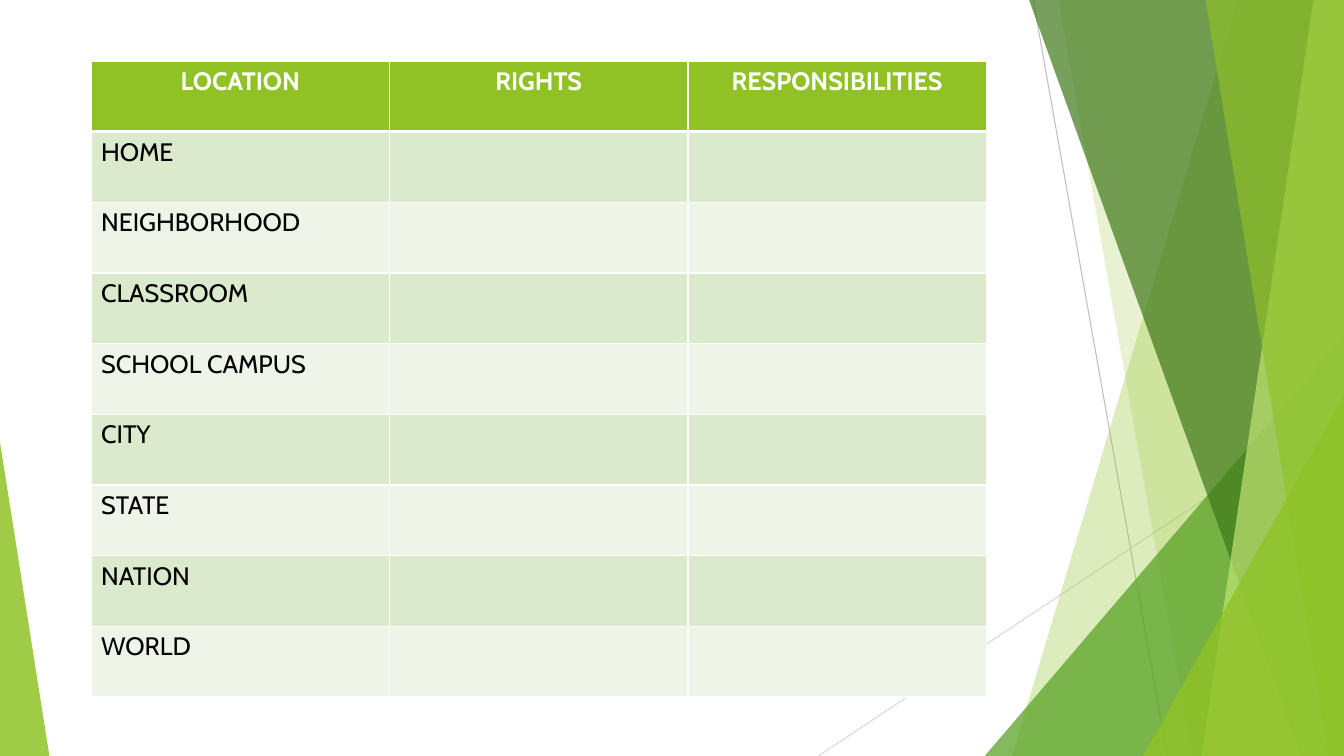
from lxml.etree import SubElement
from pptx import Presentation
from pptx.dml.color import RGBColor
from pptx.enum.shapes import MSO_CONNECTOR as Connector, MSO_SHAPE as Preset
from pptx.enum.text import PP_ALIGN as Align
from pptx.oxml.ns import qn
from pptx.util import Pt

SLIDE_WIDTH, SLIDE_HEIGHT = 960, 540
GREEN, WHITE, BLACK = "90C226", "FFFFFF", "000000"
BANDS = ("DBE9CD", "EEF4E8")
HEADINGS = ("LOCATION", "RIGHTS", "RESPONSIBILITIES")
LOCATIONS = ("HOME", "NEIGHBORHOOD", "CLASSROOM", "SCHOOL CAMPUS",
             "CITY", "STATE", "NATION", "WORLD")
THIN_LINES = (
    (158, 0, 253.8, 540, "BFBFBF"),
    (380, 290.2, 4.6, 540, "D9D9D9"),
)
FACETS = (
    ("band", 304.2, 142.9, GREEN, 30),
    ("band", 176, 271.8, GREEN, 20),
    ("triangle", 123.4, 239.8, "54A021", 72),
    ("band", 155.1, 349.5, "3F7819", 70),
    ("band", 358.2, 278.2, "C0E474", 70),
    ("band", 281.1, 369, GREEN, 65),
    ("triangle", 236.5, 283, GREEN, 80),
)


def color(value):
    return RGBColor.from_string(value)


def paint(shape, value, opacity):
    shape.shadow.inherit = False
    shape.line.fill.background()
    shape.fill.solid()
    shape.fill.fore_color.rgb = color(value)
    tone = shape.fill._xPr.find(qn("a:solidFill"))[0]
    SubElement(tone, qn("a:alpha"), val=str(opacity * 1000))


def add_triangle(slide, box, apex, value, opacity):
    shape = slide.shapes.add_shape(Preset.ISOSCELES_TRIANGLE, *map(Pt, box))
    shape.adjustments[0] = apex
    paint(shape, value, opacity)


def add_band(slide, box, top_x, bottom_x, value, opacity):
    left, top, width, height = box
    right, bottom = left + width, top + height
    corners = [(left + top_x, top), (right, top),
               (right, bottom), (left + bottom_x, bottom)]
    start, *others = [(Pt(x), Pt(y)) for x, y in corners]
    builder = slide.shapes.build_freeform(*start)
    builder.add_line_segments(others, close=True)
    paint(builder.convert_to_shape(), value, opacity)


def add_thin_line(slide, ends, value):
    line = slide.shapes.add_connector(Connector.STRAIGHT, *map(Pt, ends))
    line.line.color.rgb = color(value)
    line.line.width = Pt(0.75)
    SubElement(line._element.spPr, qn("a:effectLst"))


def add_right_facets(slide, box):
    left, top, width, height = box
    for x1, y1, x2, y2, value in THIN_LINES:
        add_thin_line(slide, (left + x1, top + y1, left + x2, top + y2), value)
    for kind, first, second, value, opacity in FACETS:
        if kind == "band":
            add_band(slide, box, first, second, value, opacity)
        else:
            corner = (left + first, top + second, width - first, height - second)
            add_triangle(slide, corner, 1, value, opacity)


def add_left_facet(slide, box):
    add_triangle(slide, box, 0, GREEN, 85)


def set_borders(cell, widths):
    properties = cell._tc.get_or_add_tcPr()
    for side, width in widths.items():
        border = SubElement(properties, qn("a:ln" + side), w=str(Pt(width)))
        fill = SubElement(border, qn("a:solidFill"))
        SubElement(fill, qn("a:srgbClr"), val=WHITE)


def fill_cell(cell, text, row):
    header = row == 0
    set_borders(cell, {"L": 1, "R": 1, "T": 3 if row == 1 else 1,
                       "B": 3 if header else 1})
    cell.fill.solid()
    cell.fill.fore_color.rgb = color(GREEN if header else BANDS[(row - 1) % 2])
    paragraph = cell.text_frame.paragraphs[0]
    paragraph.alignment = Align.CENTER if header else Align.LEFT
    if text:
        run = paragraph.add_run()
        run.text = text
        for name, value in {"name": "Cabin", "size": Pt(18), "bold": header}.items():
            setattr(run.font, name, value)
        run.font.color.rgb = color(WHITE if header else BLACK)


def add_rights_table(slide, box):
    rows = [HEADINGS] + [(location, "", "") for location in LOCATIONS]
    frame = slide.shapes.add_table(len(rows), len(HEADINGS), *map(Pt, box))
    table = frame.table
    for row, texts in enumerate(rows):
        for column, text in enumerate(texts):
            fill_cell(table.cell(row, column), text, row)


def main():
    presentation = Presentation()
    presentation.slide_width = Pt(SLIDE_WIDTH)
    presentation.slide_height = Pt(SLIDE_HEIGHT)
    slide = presentation.slides.add_slide(presentation.slide_layouts[6])
    add_right_facets(slide, (580, 0, 380, SLIDE_HEIGHT))
    add_left_facet(slide, (0, 316, 35.3, SLIDE_HEIGHT - 316))
    add_rights_table(slide, (65, 43.5, 639.6, 454.5))
    presentation.save("out.pptx")


if __name__ == "__main__":
    main()
